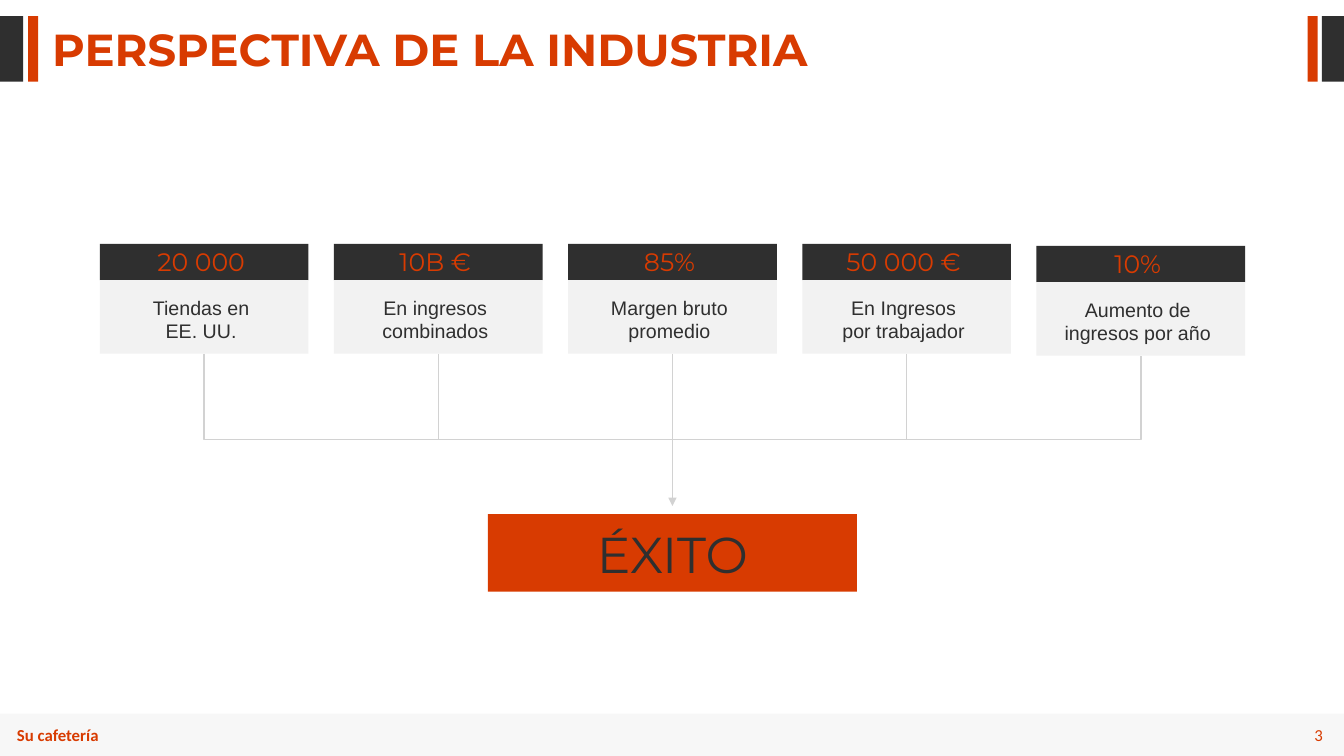
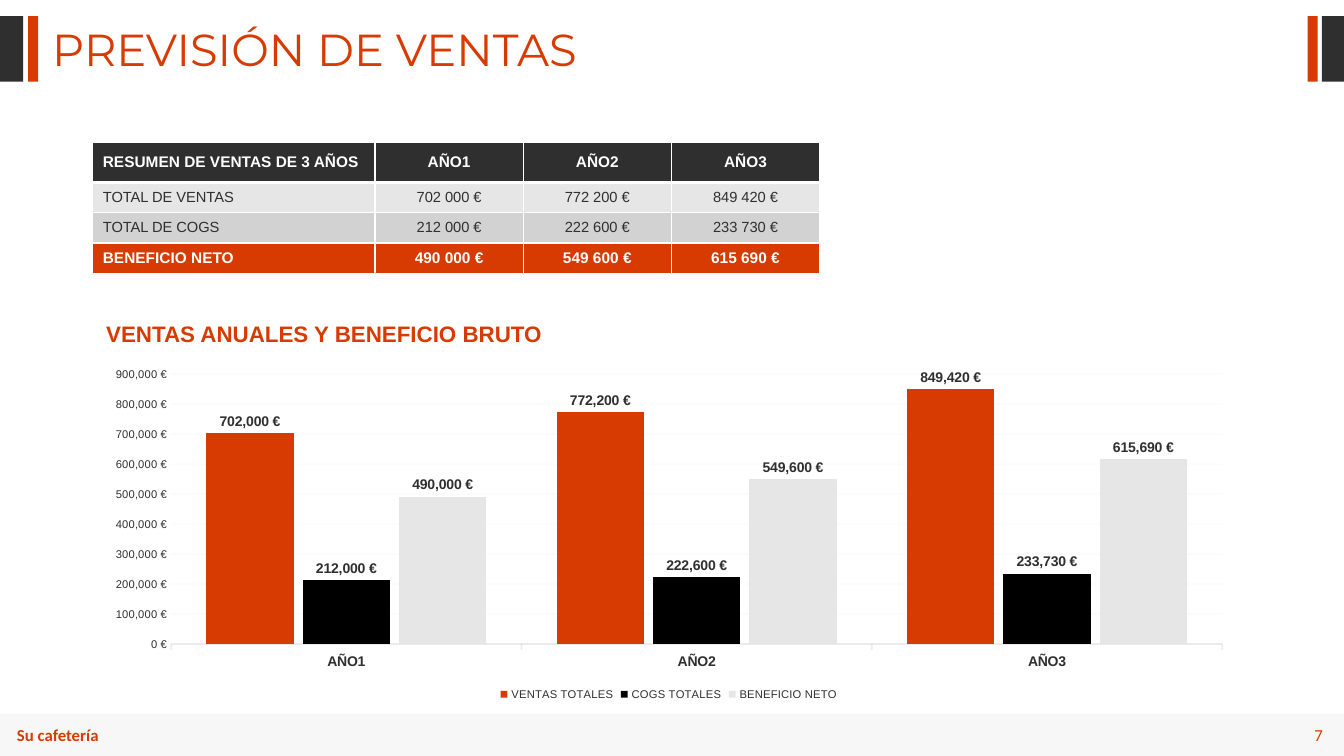
import lxml.etree
import pptx
import pptx.chart.data
import pptx.dml.color
import pptx.enum.chart
import pptx.enum.shapes
import pptx.enum.text
import pptx.oxml.ns
import pptx.util

Inches = pptx.util.Inches
Pt = pptx.util.Pt
RGBColor = pptx.dml.color.RGBColor
Align = pptx.enum.text.PP_ALIGN
Anchor = pptx.enum.text.MSO_ANCHOR
Link = pptx.enum.shapes.MSO_CONNECTOR
Chart = pptx.enum.chart
qn = pptx.oxml.ns.qn

ORANGE = RGBColor(0xD8, 0x3B, 0x01)
DARK = RGBColor(0x2F, 0x2F, 0x2F)
BLACK = RGBColor(0, 0, 0)
WHITE = RGBColor(0xFF, 0xFF, 0xFF)
PALE = RGBColor(0xF2, 0xF2, 0xF2)
LIGHT = RGBColor(0xE6, 0xE6, 0xE6)
GREY = RGBColor(0xD2, 0xD2, 0xD2)
AXIS = RGBColor(0xBF, 0xBF, 0xBF)

WIDE, HIGH = 13.33, 7.5
EURO = '#,##0\\ "€"'
YEARS = ["AÑO1", "AÑO2", "AÑO3"]
MARKS = [(0, 0.23, DARK), (0.28, 0.1, ORANGE), (12.97, 0.1, ORANGE), (13.11, 0.22, DARK)]
CARDS = [
    ("20 000", "Tiendas en EE. UU.", 0.36, 0),
    ("10B €", "En ingresos combinados", 0.36, 0),
    ("85%", "Margen bruto promedio", 0.36, 0),
    ("50 000 €", "En Ingresos por trabajador", 0.36, 0),
    ("10%", "Aumento de ingresos por año", 0.2, 0.02),
]
ROWS = [
    (["RESUMEN DE VENTAS DE 3 AÑOS"] + YEARS, DARK, WHITE, True),
    (["TOTAL DE VENTAS", "702 000 €", "772 200 €", "849 420 €"], LIGHT, DARK, False),
    (["TOTAL DE COGS", "212 000 €", "222 600 €", "233 730 €"], GREY, DARK, False),
    (["BENEFICIO NETO", "490 000 €", "549 600 €", "615 690 €"], ORANGE, WHITE, True),
]
SERIES = [
    ("VENTAS TOTALES", (702000, 772200, 849420), ORANGE),
    ("COGS TOTALES", (212000, 222600, 233730), BLACK),
    ("BENEFICIO NETO", (490000, 549600, 615690), LIGHT),
]


def put(item, **vals):
    """Set each named value on an item."""
    for key, val in vals.items():
        setattr(item, key, val)


def ink(font, size, color, bold=False, name="Arial"):
    """Style a font."""
    put(font, size=Pt(size), bold=bold, name=name)
    font.color.rgb = color


def fade(root, part):
    """Give every colour under an element an opacity in percent."""
    for color in list(root.iter(qn("a:srgbClr"))):
        lxml.etree.SubElement(color, qn("a:alpha"), val=str(part * 1000))


def write(frame, words, size, color, bold=False, name="Arial", align=Align.CENTER, pads=None, **look):
    """Fill a text frame with one styled paragraph."""
    put(frame, **{"word_wrap": True, **look})
    for side, pad in (pads or {}).items():
        setattr(frame, "margin_" + side, Inches(pad))
    para = frame.paragraphs[0]
    para.alignment = align
    run = para.add_run()
    run.text = words
    ink(run.font, size, color, bold, name)
    return para


def label(slide, box, words, size, color, **look):
    """Add a text box."""
    area = slide.shapes.add_textbox(*map(Inches, box))
    return write(area.text_frame, words, size, color, **look)


def block(slide, box, color):
    """Add a plain filled rectangle."""
    shape = slide.shapes.add_shape(pptx.enum.shapes.MSO_SHAPE.RECTANGLE, *map(Inches, box))
    shape.shadow.inherit = False
    shape.fill.solid()
    shape.fill.fore_color.rgb = color
    shape.line.fill.background()
    return shape


def wire(slide, ends, kind=Link.STRAIGHT, arrow=False):
    """Add a thin grey connector."""
    line = slide.shapes.add_connector(kind, *map(Inches, ends))
    line.line.color.rgb = GREY
    line.line.width = Pt(1)
    props = line._element.spPr
    if arrow:
        lxml.etree.SubElement(props.find(qn("a:ln")), qn("a:tailEnd"), type="triangle")
    lxml.etree.SubElement(props, qn("a:effectLst"))
    return line


def rail(slide, left, top, right, low, base):
    """Bend a connector down from one card, along the base and up to another."""
    drop, span = low - top, right - left
    mid_x, mid_y = (left + right) / 2, (top + low) / 2
    ends = (mid_x - drop / 2, mid_y - span / 2, mid_x + drop / 2, mid_y + span / 2)
    props = wire(slide, ends, Link.ELBOW)._element.spPr
    frame = props.find(qn("a:xfrm"))
    frame.set("rot", "16200000")
    frame.set("flipH", "1")
    guides = props.find(qn("a:prstGeom")).find(qn("a:avLst"))
    bend = round((base - top) / drop * 100000)
    lxml.etree.SubElement(guides, qn("a:gd"), name="adj1", fmla=f"val {bend}")


def start(deck, title, page, bold=False):
    """Add a slide with its marks, title and footer band."""
    slide = deck.slides.add_slide(deck.slide_layouts[6])
    for left, width, color in MARKS:
        block(slide, (left, 0.16, width, 0.65), color)
    band = block(slide, (0, 7.08, WIDE, 0.42), LIGHT)
    fade(band._element.spPr, 30)
    foot = {"size": 12, "color": ORANGE, "name": "Calibri"}
    label(slide, (0.07, 7.14, 1.84, 0.3), "Su cafetería", bold=True, align=Align.LEFT, **foot)
    label(slide, (12.35, 7.14, 0.87, 0.3), page, align=Align.RIGHT,
          vertical_anchor=Anchor.MIDDLE, **foot)
    para = label(slide, (0.42, 0.27, 9.86, 0.54), title, 32, ORANGE, bold=bold,
                 name="Montserrat", align=Align.LEFT)
    para.line_spacing = 0.8
    return slide


def card(slide, box, count, words, pad):
    """Stack a dark figure on a pale caption and return the caption."""
    left, top, width, height = box
    cap = 0.36
    head = block(slide, (left, top, width, cap), DARK)
    write(head.text_frame, count, 18, ORANGE, name="Montserrat", vertical_anchor=Anchor.MIDDLE,
          pads={"left": 0, "right": 0.06, "top": 0, "bottom": 0.02})
    body = block(slide, (left, top + cap, width, height - cap), PALE)
    write(body.text_frame, words, 14, DARK, vertical_anchor=Anchor.MIDDLE,
          pads={"left": pad, "right": pad + 0.06, "top": 0.04, "bottom": 0})
    return body


def flow(slide, box):
    """Lay out the cards and lead them to the goal."""
    left, top, span, height = box
    width, tall, base = 2.07, 1.09, top + 1.94
    step = (span - width) / (len(CARDS) - 1)
    bodies = []
    for spot, (count, words, pad, drop) in enumerate(CARDS):
        place = (left + spot * step, top + drop, width, tall)
        bodies.append(card(slide, place, count, words, pad))
    first, last = left + width / 2, left + span - width / 2
    low = top + tall
    rail(slide, first, low, last, low + CARDS[-1][3], base)
    for spot, body in enumerate(bodies[1:-1], 1):
        mid = first + spot * step
        wire(slide, (mid, low, mid, base)).begin_connect(body, 2)
    mid = left + span / 2
    wire(slide, (mid, base, mid, base + 0.66), arrow=True)
    goal = block(slide, (mid - 1.83, top + height - 0.77, 3.66, 0.77), ORANGE)
    write(goal.text_frame, "ÉXITO", 36, DARK, name="Montserrat", vertical_anchor=Anchor.MIDDLE)


def edge(cell, **widths):
    """Draw white cell borders of the given widths."""
    props = cell._tc.get_or_add_tcPr()
    for side, width in widths.items():
        line = lxml.etree.SubElement(props, qn("a:ln" + side), w=str(Pt(width)))
        fill = lxml.etree.SubElement(line, qn("a:solidFill"))
        lxml.etree.SubElement(fill, qn("a:srgbClr"), val=str(WHITE))


def grid(slide, box):
    """Add the table of sales by year."""
    shape = slide.shapes.add_table(len(ROWS), 4, *map(Inches, box))
    table = shape.table
    for spot, column in enumerate(table.columns):
        column.width = Inches(1.47 if spot else box[2] - 3 * 1.47)
    for down, (words, back, color, bold) in enumerate(ROWS):
        table.rows[down].height = Inches(0.3 if down else box[3] - 3 * 0.3)
        for over, word in enumerate(words):
            cell = table.cell(down, over)
            edge(cell, L=1, R=1, T=3 if down == 1 else 1, B=1 if down else 3)
            cell.fill.solid()
            cell.fill.fore_color.rgb = back
            cell.vertical_anchor = Anchor.MIDDLE
            write(cell.text_frame, word, 11 if bold else 10.5, color, bold,
                  align=Align.CENTER if over else Align.LEFT)


def bars(slide, box):
    """Add the column chart of sales by year."""
    data = pptx.chart.data.CategoryChartData(number_format=EURO)
    data.categories = YEARS
    for name, vals, _ in SERIES:
        data.add_series(name, vals)
    kind = Chart.XL_CHART_TYPE.COLUMN_CLUSTERED
    chart = slide.shapes.add_chart(kind, *map(Inches, box), data).chart
    put(chart, has_title=False, has_legend=True)
    ink(chart.font, 8, DARK)
    put(chart.legend, position=Chart.XL_LEGEND_POSITION.BOTTOM, include_in_layout=False)
    plot = chart.plots[0]
    put(plot, gap_width=80, overlap=-10, vary_by_categories=False)
    for series, (_, _, color) in zip(plot.series, SERIES):
        series.format.fill.solid()
        series.format.fill.fore_color.rgb = color
        tags = series.data_labels
        put(tags, show_value=True, position=Chart.XL_LABEL_POSITION.OUTSIDE_END,
            number_format=EURO, number_format_is_linked=False)
        ink(tags.font, 10, DARK, True)
    ticks = Chart.XL_TICK_MARK
    cats = chart.category_axis
    put(cats, major_tick_mark=ticks.OUTSIDE, minor_tick_mark=ticks.NONE)
    ink(cats.tick_labels.font, 10, DARK, True)
    cats.format.line.color.rgb = AXIS
    cats.format.line.width = Pt(1.25)
    fade(cats._element.find(qn("c:spPr")), 27)
    scale = chart.value_axis
    put(scale, major_tick_mark=ticks.NONE, minor_tick_mark=ticks.NONE, has_major_gridlines=True,
        minimum_scale=0, maximum_scale=900000, major_unit=100000)
    put(scale.tick_labels, number_format=EURO, number_format_is_linked=False)
    scale.format.line.fill.background()
    rule = scale.major_gridlines.format.line
    rule.color.rgb = PALE
    rule.width = Pt(0.75)
    fade(scale._element.find(qn("c:majorGridlines")), 30)


def main():
    """Build and save both slides."""
    deck = pptx.Presentation()
    put(deck, slide_width=Inches(WIDE), slide_height=Inches(HIGH))
    slide = start(deck, "PERSPECTIVA DE LA INDUSTRIA", "3", bold=True)
    flow(slide, (0.99, 2.42, 11.36, 3.45))
    slide = start(deck, "PREVISIÓN DE VENTAS", "7")
    grid(slide, (0.92, 1.41, 7.21, 1.3))
    label(slide, (0.5, 3.13, 5.43, 0.37), "VENTAS ANUALES Y BENEFICIO BRUTO", 16, ORANGE, bold=True)
    bars(slide, (0.92, 3.58, 11.43, 3.41))
    deck.save("out.pptx")


if __name__ == "__main__":
    main()
